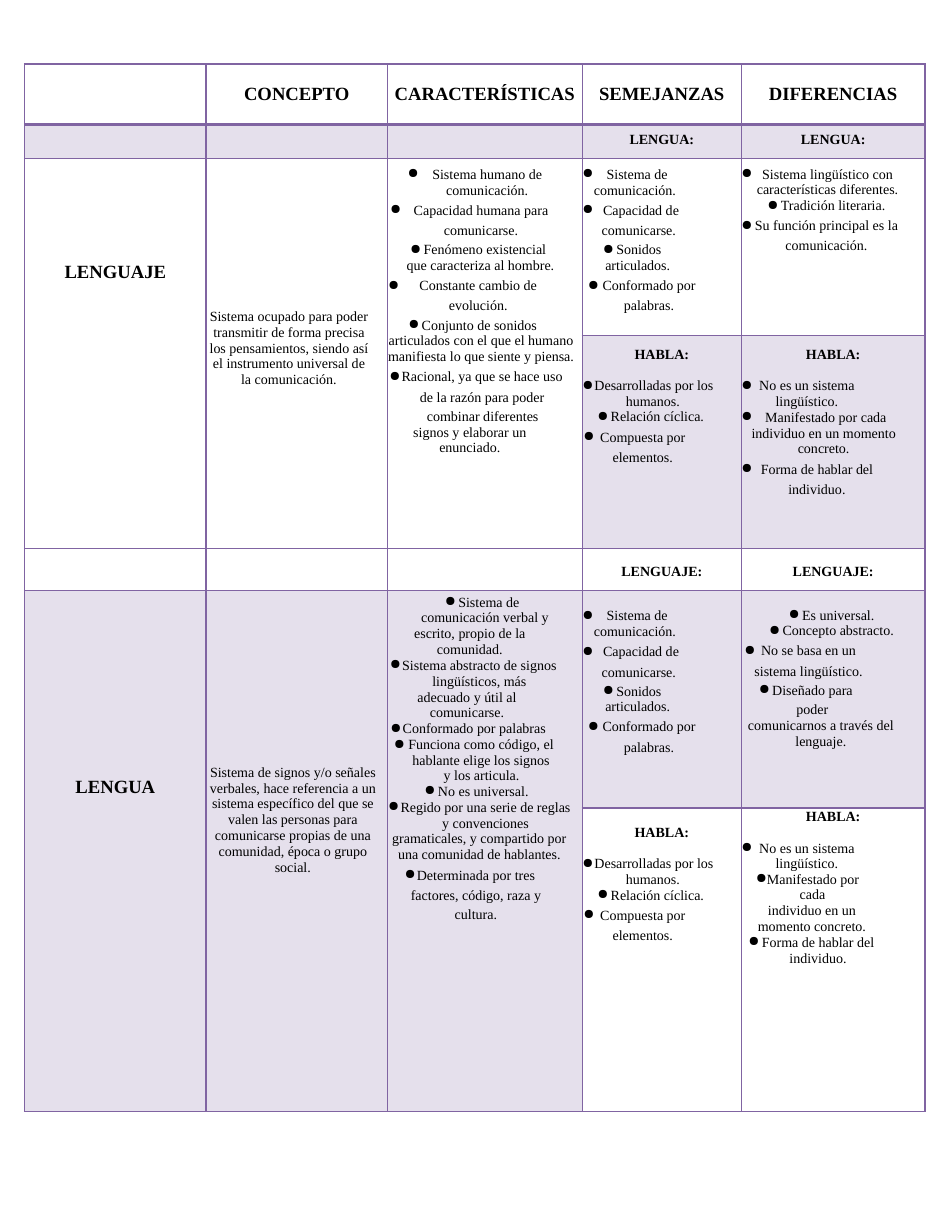
from lxml import etree
from pptx import Presentation
from pptx.dml.color import RGBColor
from pptx.enum.text import PP_ALIGN
from pptx.oxml.ns import qn
from pptx.util import Inches, Pt

CENTER = PP_ALIGN.CENTER
PURPLE, BLACK = "8064A2", "000000"
TITLE = {"name": "Times New Roman", "size": Pt(12), "bold": True}
HEADING = {**TITLE, "size": Pt(9)}
BODY = {**HEADING, "bold": False}


def color(hex_text):
    return RGBColor.from_string(hex_text)


def write(cell, top, lines, style):
    """Each line: text, bullet gap, left and right margin (inches), leading."""
    cell.margin_top = Inches(top)
    for i, (text, gap, left, right, leading) in enumerate(lines):
        frame = cell.text_frame
        paragraph = frame.paragraphs[0] if i == 0 else frame.add_paragraph()
        paragraph.alignment = CENTER
        paragraph.line_spacing = Pt(leading) if leading > 2 else leading
        props = paragraph._p.get_or_add_pPr()
        for key, inches in (("marL", left), ("marR", right), ("indent", -gap)):
            props.set(key, str(Inches(inches)))
        is_heading = text.endswith("A:")
        if i and lines[i - 1][0].endswith("A:"):
            paragraph.space_before = Pt(10)
        if gap:
            etree.SubElement(props, qn("a:buChar")).set("char", "●")
        run = paragraph.add_run()
        run.text = text
        for key, value in (HEADING if is_heading else style).items():
            setattr(run.font, key, value)
        run.font.color.rgb = color(BLACK)


# Wording shared by several cells
language_likeness = [
    ("Sistema de comunicación.", .22, .06, .54, 1.03),
    ("Capacidad de comunicarse.", .2, .06, .47, 13),
    ("Sonidos", .12, .12, .53, 12.3),
    ("articulados.", 0, 0, .43, 1),
    ("Conformado por palabras.", .13, .13, .36, 13),
]
speech_title = ("HABLA:", 0, 0, 0, 1)
speech_likeness = [
    speech_title,
    ("Desarrolladas por los humanos.", .14, .08, .24, 1.02),
    ("Relación cíclica.", .12, .12, .2, 1),
    ("Compuesta por elementos.", .15, .1, .44, 13),
]
no_system = ("No es un sistema lingüístico.", .21, .1, .57, 1.02)

# Body cells: (row, column): (top margin, lines)
body = {
    (2, 1): (1.34, [
        ("Sistema ocupado para poder transmitir de forma precisa los pensamientos, "
         "siendo así el instrumento universal de la comunicación.", 0, .02, .16, 1.02)]),
    (2, 2): (.07, [
        ("Sistema humano de comunicación.", .22, .24, .2, 1.03),
        ("Capacidad humana para comunicarse.", .21, .21, .28, 13),
        ("Fenómeno existencial", .12, .12, .12, 12.3),
        ("que caracteriza al hombre.", 0, 0, .08, 1),
        ("Constante cambio de evolución.", .28, .28, .4, 13),
        ("Conjunto de sonidos", .12, .12, .22, 12.3),
        ("articulados con el que el humano manifiesta lo que siente y piensa.",
         0, 0, .07, 1.02),
        ("Racional, ya que se hace uso de la razón para poder", .11, .11, .16, 13),
        ("combinar diferentes", 0, 0, .04, 12.3),
        ("signos y elaborar un enunciado.", 0, .1, .37, 1.02)]),
    (2, 3): (.07, language_likeness),
    (2, 4): (.07, [
        ("Sistema lingüístico con características diferentes.", .24, .1, .2, 1.02),
        ("Tradición literaria.", .12, .12, .12, 1),
        ("Su función principal es la comunicación.", .15, .1, .22, 13)]),
    (3, 3): (.1, speech_likeness),
    (3, 4): (.1, [
        speech_title,
        no_system,
        ("Manifestado por cada individuo en un momento concreto.",
         .24, .06, .23, 1.02),
        ("Forma de hablar del individuo.", .22, .1, .39, 13)]),
    (5, 1): (1.55, [
        ("Sistema de signos y/o señales verbales, hace referencia a un sistema "
         "específico del que se valen las personas para comunicarse propias de una "
         "comunidad, época o grupo social.", 0, .02, .09, 1.02)]),
    (5, 2): (.02, [
        ("Sistema de", .12, .12, .05, 11.2),
        ("comunicación verbal y", 0, 0, 0, 1),
        ("escrito, propio de la comunidad.", 0, .1, .37, 1.02),
        ("Sistema abstracto de signos lingüísticos, más", .11, .11, .21, 1.02),
        ("adecuado y útil al comunicarse.", 0, .1, .42, 1.02),
        ("Conformado por palabras", .11, .11, .3, 1.02),
        ("Funciona como código, el hablante elige los signos", .13, .14, .21, 1.02),
        ("y los articula.", 0, 0, .06, 1),
        ("No es universal.", .12, .12, .15, 1),
        ("Regido por una serie de reglas y convenciones", .11, .11, .1, 1.02),
        ("gramaticales, y compartido por una comunidad de hablantes.",
         0, 0, .1, 1.02),
        ("Determinada por tres factores, código, raza y", .11, .11, .27, 13),
        ("cultura.", 0, 0, .16, 12.3)]),
    (5, 3): (.15, language_likeness),
    (5, 4): (.15, [
        ("Es universal.", .12, .12, .03, 1),
        ("Concepto abstracto.", .12, .12, .03, 1),
        ("No se basa en un sistema lingüístico.", .15, .1, .54, 13),
        ("Diseñado para poder", .12, .12, .49, 12.3),
        ("comunicarnos a través del lenguaje.", 0, 0, .22, 1.02)]),
    (6, 3): (.15, speech_likeness),
    (6, 4): (.01, [
        speech_title,
        no_system,
        ("Manifestado por cada", .09, .09, .46, 1),
        ("individuo en un momento concreto.", 0, .1, .48, 1.02),
        ("Forma de hablar del individuo.", .12, .12, .39, 1.02)]),
}

# Page and comparison grid
prs = Presentation()
prs.slide_width, prs.slide_height = Inches(8.5), Inches(11)
slide = prs.slides.add_slide(prs.slide_layouts[6])
widths = [1.62, 1.62, 1.74, 1.42, 1.64]
heights = [.54, .29, 1.58, 1.9, .38, 1.94, 2.71]
table = slide.shapes.add_table(
    len(heights), len(widths), Inches(.22), Inches(.57),
    Inches(sum(widths)), Inches(sum(heights))).table
table.first_row = table.horz_banding = False
for column, width in zip(table.columns, widths):
    column.width = Inches(width)
for row, height in zip(table.rows, heights):
    row.height = Inches(height)

# Shading and borders
shaded = {(r, c) for r in (1, 5) for c in range(5)}
shaded |= {(3, 3), (3, 4), (6, 0), (6, 1), (6, 2)}
for r in range(len(heights)):
    for c in range(len(widths)):
        cell = table.cell(r, c)
        for side in ("left", "top", "right", "bottom"):
            setattr(cell, f"margin_{side}", 0)
        cell_props = cell._tc.get_or_add_tcPr()
        if (r, c) in shaded:
            cell.fill.solid()
            cell.fill.fore_color.rgb = color(PURPLE)
            tint = cell_props.find(".//" + qn("a:srgbClr"))
            etree.SubElement(tint, qn("a:alpha")).set("val", "20000")
        else:
            cell.fill.background()
        for i, side in enumerate("LRTB"):
            thick = (r, side) in ((0, "B"), (1, "T"))
            line = etree.Element(qn(f"a:ln{side}"), w=str(Pt(2 if thick else 1)))
            fill = etree.SubElement(line, qn("a:solidFill"))
            etree.SubElement(fill, qn("a:srgbClr")).set("val", PURPLE)
            cell_props.insert(i, line)

# Each concept spans two rows in the first three columns
for r in (2, 5):
    for c in range(3):
        table.cell(r, c).merge(table.cell(r + 1, c))

# Column titles, concept names and section headings
titles = ["CONCEPTO", "CARACTERÍSTICAS", "SEMEJANZAS", "DIFERENCIAS"]
for c, title in enumerate(titles, 1):
    write(table.cell(0, c), .18, [(title, 0, 0, 0, 1)], TITLE)
for r, top, concept in ((2, .92, "LENGUAJE"), (5, 1.66, "LENGUA")):
    write(table.cell(r, 0), top, [(concept, 0, 0, 0, 1)], TITLE)
for c in (3, 4):
    write(table.cell(1, c), 0, [("LENGUA:", 0, 0, 0, 1.5)], HEADING)
    write(table.cell(4, c), .14, [("LENGUAJE:", 0, 0, 0, 1)], HEADING)

# Descriptions
for (r, c), (top, lines) in body.items():
    write(table.cell(r, c), top, lines, BODY)

prs.save("out.pptx")
